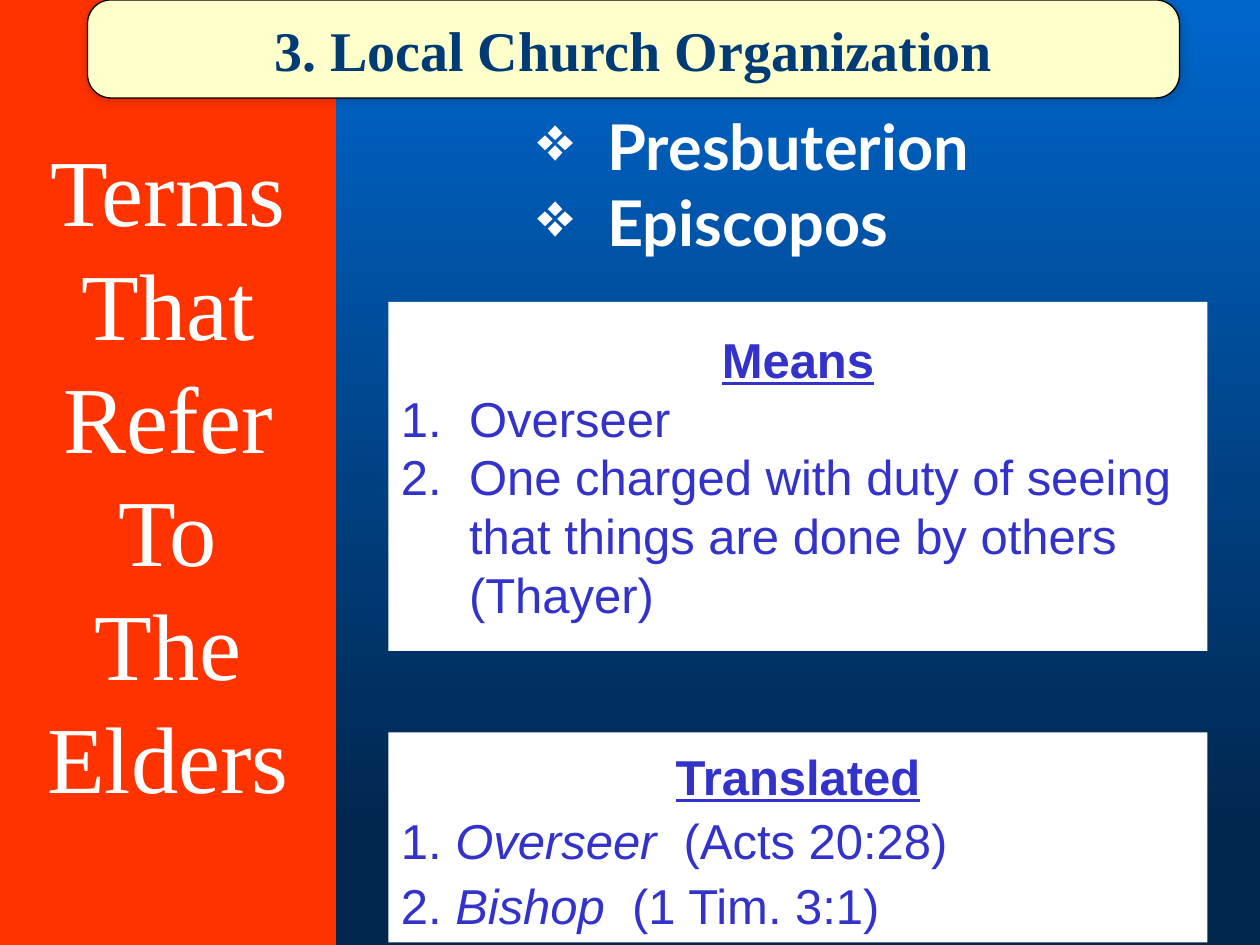
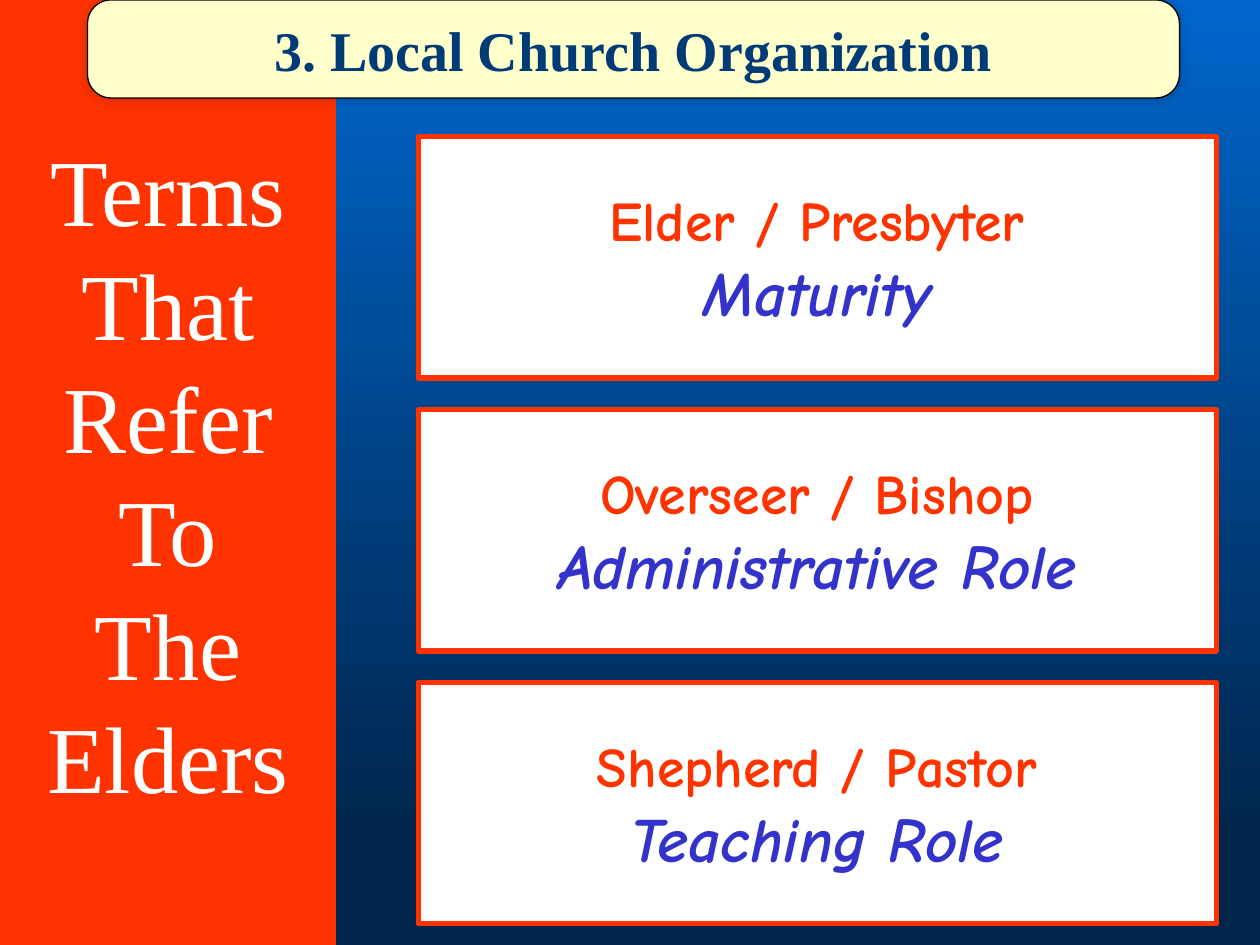
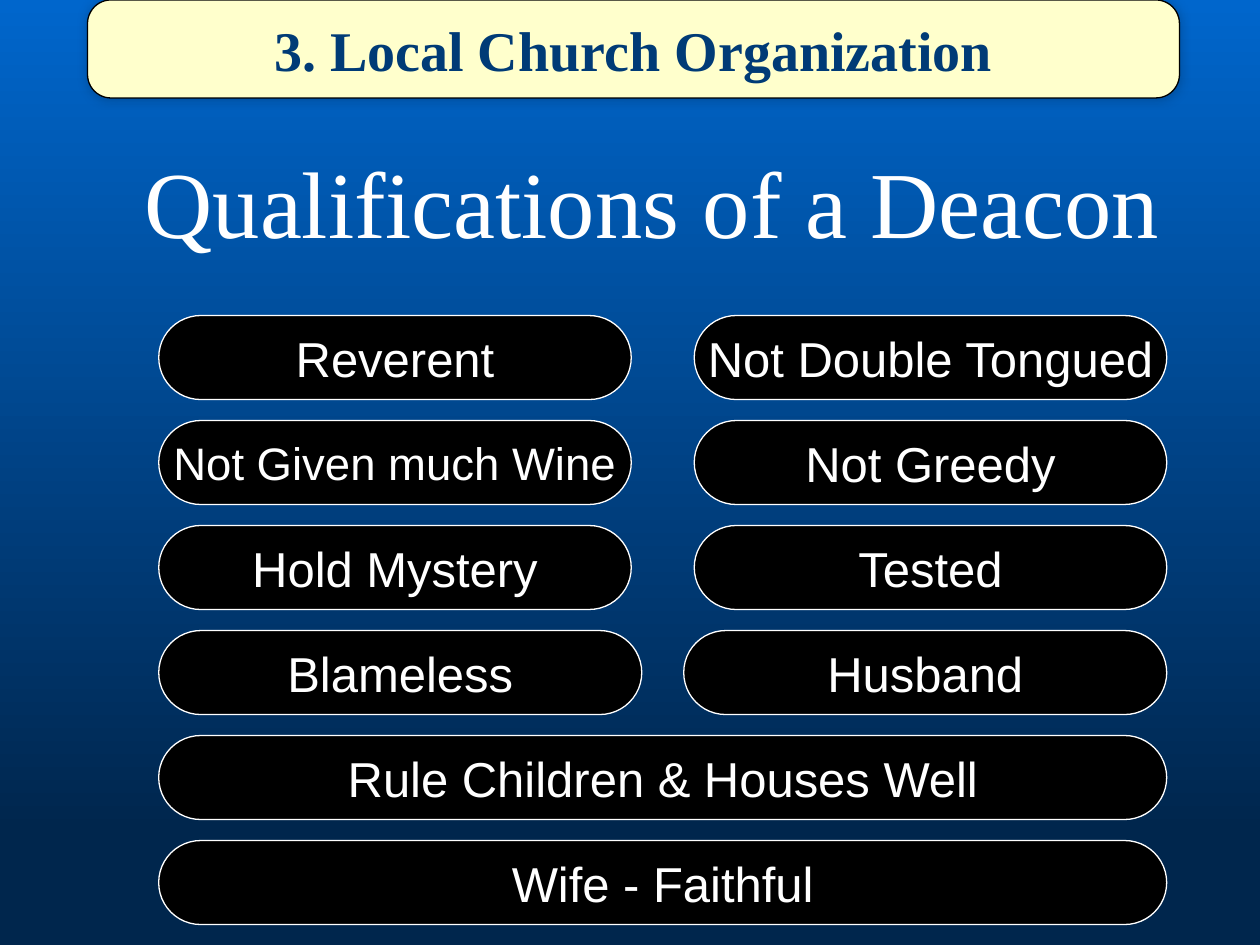
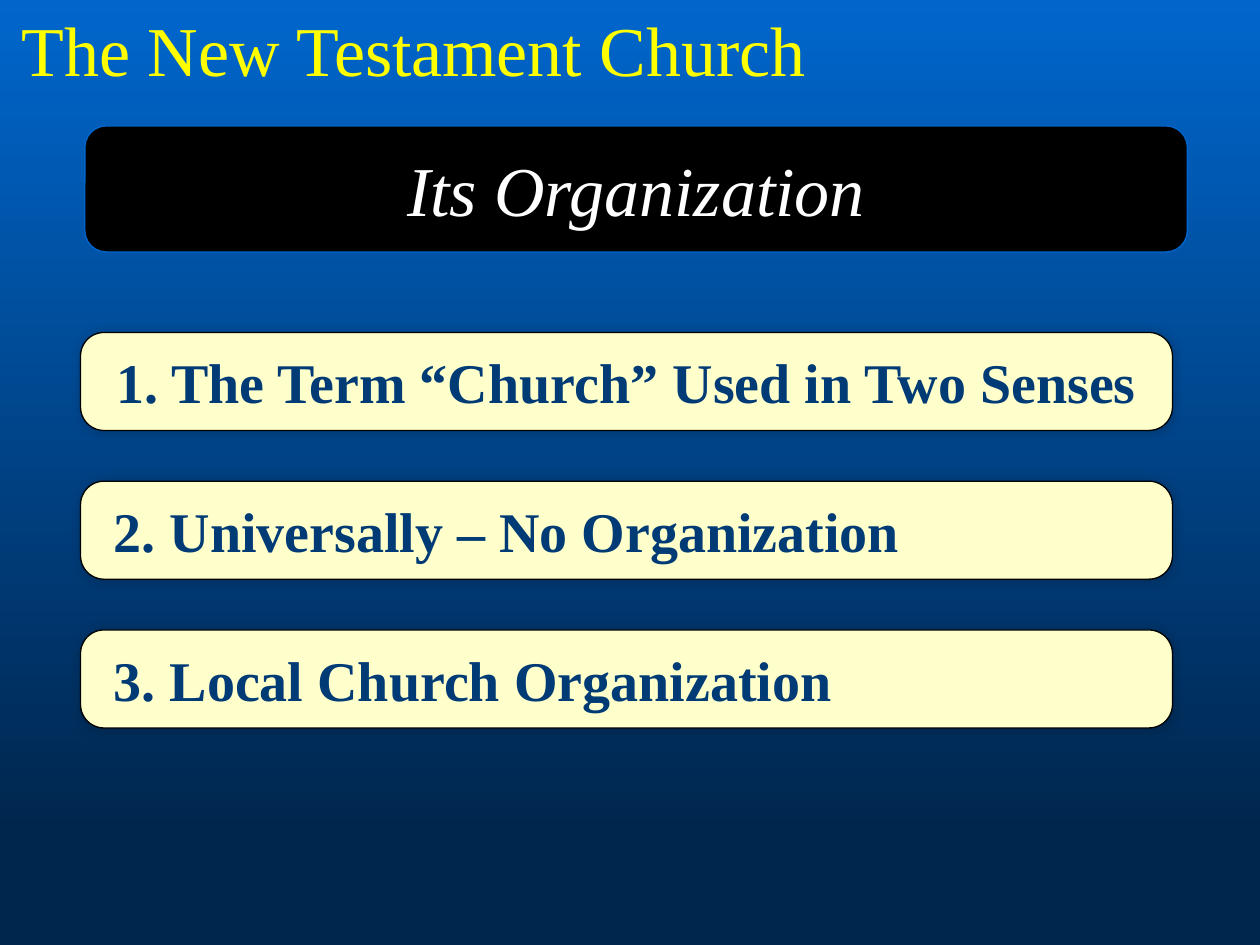
from dataclasses import dataclass, replace

from lxml.etree import SubElement
from pptx import Presentation
from pptx.dml.color import RGBColor
from pptx.enum.shapes import MSO_SHAPE
from pptx.enum.text import MSO_ANCHOR, MSO_AUTO_SIZE, PP_ALIGN
from pptx.oxml.ns import qn
from pptx.util import Pt

SKY, NIGHT = "0066CC", "00264D"
RED, INDIGO, NAVY = "FF3300", "3333CC", "003B76"
CREAM, YELLOW, WHITE, BLACK = "FFFFCC", "FFFF00", "FFFFFF", "000000"
SERIF, SANS, COMIC = "Times New Roman", "Arial", "Comic Neue"
TOPIC = "3. Local Church Organization"
SIDEBAR_WORDS = "Terms That Refer To The Elders".split()


@dataclass(frozen=True)
class Style:
    """Character formatting of a paragraph."""
    font: str
    size: float
    color: str
    bold: bool = False
    italic: bool = False
    underline: bool = False


@dataclass(frozen=True)
class Line:
    """A paragraph: italic runs follow the plain ones in alternation."""
    runs: tuple
    style: Style
    centred: bool = True
    spacing: float = None
    bullet: str = None
    indent: float = 0


DISPLAY = Style(SERIF, 54, WHITE)
CARD = Style(SERIF, 32, NAVY, bold=True)
BODY = Style(SANS, 28, INDIGO)
HEADING = replace(BODY, bold=True, underline=True)
TERM = Style(COMIC, 32, RED, bold=True)
ROLE = replace(TERM, size=36, color=INDIGO, italic=True)
PILL = Style(SANS, 28, WHITE)
GREEK = Style("Lato", 36, WHITE, bold=True)


def rgb(value):
    """Turn a hex string into a colour."""
    return RGBColor.from_string(value)


def add_color(parent, value):
    """Append a plain colour element."""
    return SubElement(parent, qn("a:srgbClr"), val=value)


def format_indent(paragraph, line):
    """Indent a paragraph and hang its bullet or number."""
    properties = paragraph._p.get_or_add_pPr()
    properties.set("marL", str(Pt(line.indent)))
    if line.bullet:
        properties.set("indent", str(-Pt(line.indent)))
        add_color(SubElement(properties, qn("a:buClr")), line.style.color)
        if line.bullet == "number":
            SubElement(properties, qn("a:buAutoNum"), type="arabicPeriod")
        else:
            SubElement(properties, qn("a:buChar"), char=line.bullet)


def write(frame, lines, wrap=False):
    """Fill a text frame with formatted lines."""
    frame.word_wrap = wrap
    for index, line in enumerate(lines):
        paragraph = frame.add_paragraph() if index else frame.paragraphs[0]
        paragraph.alignment = PP_ALIGN.CENTER if line.centred else PP_ALIGN.LEFT
        if line.spacing:
            paragraph.line_spacing = line.spacing
        if line.indent:
            format_indent(paragraph, line)
        style, font = line.style, paragraph.font
        font.name, font.size = style.font, Pt(style.size)
        font.bold, font.italic, font.underline = style.bold, style.italic, style.underline
        font.color.rgb = rgb(style.color)
        for position, text in enumerate(line.runs):
            run = paragraph.add_run()
            run.text = text
            if position % 2:
                run.font.italic = True


def add_panel(slide, box, lines, fill, border=None, border_width=0.75,
              corner=None, wrap=False):
    """Draw a filled panel, rounded when a corner is given."""
    kind = MSO_SHAPE.RECTANGLE if corner is None else MSO_SHAPE.ROUNDED_RECTANGLE
    panel = slide.shapes.add_shape(kind, *map(Pt, box))
    if corner is not None:
        panel.adjustments[0] = corner
    panel.shadow.inherit = False
    panel.fill.solid()
    panel.fill.fore_color.rgb = rgb(fill)
    if border:
        panel.line.color.rgb = rgb(border)
        panel.line.width = Pt(border_width)
    else:
        panel.line.fill.background()
    panel.text_frame.vertical_anchor = MSO_ANCHOR.MIDDLE
    write(panel.text_frame, lines, wrap)
    return panel


def add_label(slide, box, lines):
    """Place free text that fits its box."""
    label = slide.shapes.add_textbox(*map(Pt, box))
    write(label.text_frame, lines)
    label.text_frame.auto_size = MSO_AUTO_SIZE.SHAPE_TO_FIT_TEXT
    return label


def add_card(slide, left, top, text, centred=True):
    """Draw a cream card with a soft glow of shadow."""
    line = Line((text,), CARD, centred, indent=0 if centred else 8)
    card = add_panel(slide, (left, top, 624, 56), [line], CREAM, BLACK,
                     corner=0.24, wrap=not centred)
    effects = card._element.spPr.find(qn("a:effectLst"))
    shadow = SubElement(effects, qn("a:outerShdw"), blurRad=str(Pt(6)),
                        dist="0", dir="13500000")
    SubElement(add_color(shadow, BLACK), qn("a:alpha"), val="20000")


def add_sidebar(slide):
    """Draw the red band that names the subject, one word a line."""
    add_panel(slide, (0, 0, 192, 540),
              [Line((word,), DISPLAY) for word in SIDEBAR_WORDS], RED)


def add_background_slide(deck):
    """Add a blank slide with the blue gradient."""
    slide = deck.slides.add_slide(deck.slide_layouts[6])
    fill = slide.background.fill
    fill.gradient()
    fill.gradient_angle = 270
    for stop, color, position in zip(fill.gradient_stops, (SKY, NIGHT), (0, 0.88)):
        stop.color.rgb = rgb(color)
        stop.position = position
    return slide


def build_meanings(slide):
    """Explain what the Greek terms mean and how they are translated."""
    add_sidebar(slide)
    add_label(slide, (300, 58, 290, 94),
              [Line((word,), GREEK, False, bullet="❖", indent=40)
               for word in ("Presbuterion", "Episcopos")])
    meanings = ("Overseer",
                "One charged with duty of seeing that things are done by others (Thayer)")
    add_panel(slide, (222, 172.5, 468, 199.5),
              [Line(("Means",), HEADING)]
              + [Line((text,), BODY, False, bullet="number", indent=39)
                 for text in meanings], WHITE, wrap=True)
    translations = (("1. ", "Overseer ", " (Acts 20:28)"),
                    ("2. ", "Bishop ", " (1 Tim. 3:1)"))
    add_panel(slide, (222, 418.5, 468, 120),
              [Line(("Translated",), HEADING, spacing=1.1)]
              + [Line(runs, BODY, False, spacing=1.1) for runs in translations],
              WHITE, wrap=True)
    add_card(slide, 50, 0, TOPIC)


def build_roles(slide):
    """Stack the elder's titles with the role each one stresses."""
    add_sidebar(slide)
    roles = (("Elder / Presbyter", "Maturity"),
             ("Overseer / Bishop", "Administrative Role"),
             ("Shepherd / Pastor", "Teaching Role"))
    for row, (term, role) in enumerate(roles):
        add_panel(slide, (239, 78 + 156 * row, 456, 138),
                  [Line((term,), TERM), Line((role,), ROLE)], WHITE, RED, 3)
    add_card(slide, 50, 0, TOPIC)


def add_pill_grid(slide, left, top, width, rows):
    """Lay out rows of equal pills across the given width."""
    for row, (gap, labels) in enumerate(rows):
        pill_width = (width - gap * (len(labels) - 1)) / len(labels)
        for column, label in enumerate(labels):
            style = replace(PILL, size=26) if "Wine" in label else PILL
            box = (left + column * (pill_width + gap), top + 60 * row, pill_width, 48)
            add_panel(slide, box, [Line((label,), style)], BLACK, WHITE, corner=0.5)


def build_deacon(slide):
    """List the qualifications of a deacon."""
    add_pill_grid(slide, 90.7, 180.3, 576, (
        (36, ("Reverent", "Not Double Tongued")),
        (36, ("Not Given much Wine", "Not Greedy")),
        (36, ("Hold Mystery", "Tested")),
        (24, ("Blameless", "Husband")),
        (0, ("Rule Children & Houses Well",)),
        (0, ("Wife - Faithful",))))
    add_label(slide, (72.5, 78.5, 600.5, 72.7),
              [Line(("Qualifications of a Deacon",), DISPLAY)])
    add_card(slide, 50, 0, TOPIC)


def build_summary(slide):
    """Sum up the three points on organization."""
    title = add_label(slide, (3, 0, 467, 55.5),
                      [Line(("The New Testament Church",), Style(SERIF, 40, YELLOW))])
    properties = title.text_frame.paragraphs[0].font._element
    outline = SubElement(properties, qn("a:ln"), w=str(Pt(0.75)))
    add_color(SubElement(outline, qn("a:solidFill")), SKY)
    properties.insert(0, outline)
    add_panel(slide, (48.5, 72, 630, 72),
              [Line(("Its Organization",), Style(SERIF, 40, WHITE, italic=True))],
              BLACK, SKY, corner=0.17, wrap=True)
    points = ("1. The Term “Church” Used in Two Senses",
              "2. Universally – No Organization", TOPIC)
    for row, point in enumerate(points):
        add_card(slide, 46, 190 + 85 * row, point, centred=row == 0)


def main():
    """Build the four slides and save them."""
    deck = Presentation()
    deck.slide_width, deck.slide_height = Pt(720), Pt(540)
    for build in (build_meanings, build_roles, build_deacon, build_summary):
        build(add_background_slide(deck))
    deck.save("out.pptx")


if __name__ == "__main__":
    main()
